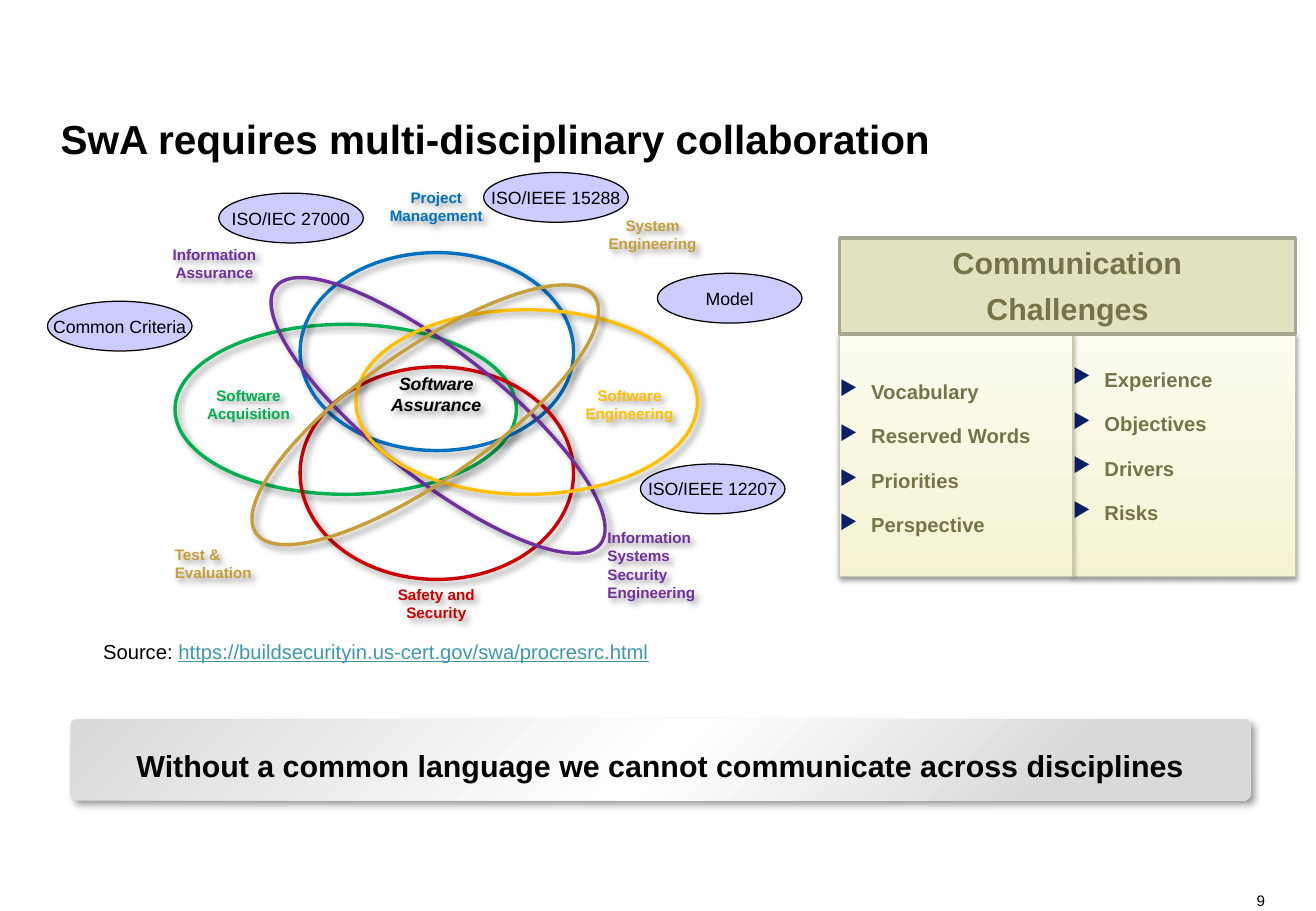
from dataclasses import dataclass

from lxml import etree
from pptx import Presentation
from pptx.dml.color import RGBColor
from pptx.enum.shapes import MSO_SHAPE
from pptx.enum.text import MSO_ANCHOR, PP_ALIGN
from pptx.oxml.ns import qn
from pptx.util import Inches, Pt

LEFT, CENTER, RIGHT = PP_ALIGN.LEFT, PP_ALIGN.CENTER, PP_ALIGN.RIGHT
TOP, MIDDLE, BOTTOM = MSO_ANCHOR.TOP, MSO_ANCHOR.MIDDLE, MSO_ANCHOR.BOTTOM
RECT, ROUND_RECT, OVAL = MSO_SHAPE.RECTANGLE, MSO_SHAPE.ROUNDED_RECTANGLE, MSO_SHAPE.OVAL


@dataclass(frozen=True)
class Theme:
    font: str = "Arial"
    black: str = "000000"
    green: str = "00B050"
    blue: str = "0070C0"
    red: str = "CC0000"
    purple: str = "7030A0"
    yellow: str = "FFC000"
    gold: str = "C69E3A"
    olive: str = "757448"
    header_fill: str = "E2E1C0"
    header_line: str = "A7A68E"
    panel_line: str = "C9C8A9"
    bullet: str = "0B1F65"
    standard: str = "CCCCFF"
    link: str = "3D97AF"
    panel_stops: tuple = ((0, "F4F3CF"), (35, "F7F6DD"), (100, "FCFCF1"))
    banner_stops: tuple = ((0, "D9D9D9"), (50, "FFFFFF"), (83, "D9D9D9"))
    soft_shadow: tuple = (40, 4, 3, 45)
    panel_shadow: tuple = (38, 3.1, 1.6, 90)
    title_size: float = 24
    heading_size: float = 18
    body_size: float = 12
    standard_size: float = 10.5
    label_size: float = 9


T = Theme()


def add_color(parent, color):
    return etree.SubElement(parent, qn("a:srgbClr"), val=color)


def set_shadow(sp, shadow=None):
    sp.shadow.inherit = False
    if shadow:
        alpha, blur, dist, angle = shadow
        effects = sp._element.spPr.find(qn("a:effectLst"))
        outer = etree.SubElement(effects, qn("a:outerShdw"), blurRad=str(Pt(blur)),
                                 dist=str(Pt(dist)), dir=str(angle * 60000),
                                 algn="tl", rotWithShape="0")
        etree.SubElement(add_color(outer, T.black), qn("a:alpha"), val=str(alpha * 1000))


def set_gradient(sp, stops, angle):
    sp.fill.gradient()
    sp.fill.gradient_angle = angle
    gs_list = sp._element.spPr.find(qn("a:gradFill")).find(qn("a:gsLst"))
    for gs in list(gs_list):
        gs_list.remove(gs)
    for pos, color in stops:
        add_color(etree.SubElement(gs_list, qn("a:gs"), pos=str(pos * 1000)), color)


def add_bullet(p):
    pPr = p._p.get_or_add_pPr()
    pPr.set("marL", str(Inches(0.26)))
    pPr.set("indent", str(-Inches(0.26)))
    add_color(etree.SubElement(pPr, qn("a:buClr")), T.bullet)
    etree.SubElement(pPr, qn("a:buChar"), char="▶")


def add_run(p, text, size, color=T.black, bold=False, italic=False, underline=False):
    r = p.add_run()
    r.text = text
    f = r.font
    f.name, f.size, f.color.rgb = T.font, Pt(size), RGBColor.from_string(color)
    f.bold, f.italic, f.underline = bold, italic, underline


def set_text(sp, text, size, align=LEFT, anchor=TOP, insets=(0.1, 0.05, 0.1, 0.05),
             wrap=True, before=0, after=0, spacing=None, bullet=False, **font):
    tf = sp.text_frame
    tf.word_wrap, tf.vertical_anchor = wrap, anchor
    tf.margin_left, tf.margin_top, tf.margin_right, tf.margin_bottom = map(Inches, insets)
    for i, line in enumerate(text.split("\n")):
        p = tf.add_paragraph() if i else tf.paragraphs[0]
        if bullet:
            add_bullet(p)
        p.alignment = align
        p.space_before, p.space_after = Pt(before if i else 0), Pt(after)
        if spacing:
            p.line_spacing = spacing
        add_run(p, line, size, **font)
    return tf


def add_text(slide, box, text, size, **fmt):
    sp = slide.shapes.add_textbox(*map(Inches, box))
    set_text(sp, text, size, **fmt)
    return sp


def add_shape(slide, kind, box, fill=None, line=None, width=0.75, shadow=None):
    sp = slide.shapes.add_shape(kind, *map(Inches, box))
    if fill:
        sp.fill.solid()
        sp.fill.fore_color.rgb = RGBColor.from_string(fill)
    else:
        sp.fill.background()
    if line:
        sp.line.color.rgb = RGBColor.from_string(line)
        sp.line.width = Pt(width)
    else:
        sp.line.fill.background()
    set_shadow(sp, shadow)
    return sp


def add_title(slide, box):
    add_text(slide, box, "SwA requires multi-disciplinary collaboration", T.title_size,
             anchor=BOTTOM, insets=(0, 0, 0, 0), spacing=0.9, bold=True)


def add_disciplines(slide, box):
    x, y = box[:2]
    for dx, dy, w, h, rotation, color in (
        (0.19, 1.17, 2.81, 1.4, 0, T.green),
        (1.22, 0.58, 2.25, 1.63, 0, T.blue),
        (1.22, 1.52, 2.25, 1.75, 0, T.red),
        (0.65, 1.4, 3.41, 1.04, 38.4, T.purple),
        (1.68, 1.05, 2.81, 1.52, 0, T.yellow),
        (0.55, 1.38, 3.4, 1.07, 325, T.gold),
    ):
        sp = add_shape(slide, OVAL, (x + dx, y + dy, w, h), line=color, width=2,
                       shadow=T.soft_shadow)
        sp.rotation = rotation
    for text, dx, dy, w, h, color, align in (
        ("Software Acquisition", 0.28, 1.63, 1.03, 0.57, T.green, CENTER),
        ("Information Assurance", 0, 0.47, 1.03, 0.57, T.purple, CENTER),
        ("Project\nManagement", 1.78, 0, 1.12, 0.57, T.blue, CENTER),
        ("System\nEngineering", 3.56, 0.23, 1.12, 0.57, T.gold, CENTER),
        ("Software\nEngineering", 3.37, 1.63, 1.12, 0.57, T.yellow, CENTER),
        ("Information Systems Security Engineering", 3.65, 2.8, 1.12, 0.99, T.purple, LEFT),
        ("Safety and Security", 1.78, 3.27, 1.12, 0.57, T.red, CENTER),
        ("Test &\nEvaluation", 0.09, 2.94, 1.12, 0.57, T.gold, LEFT),
    ):
        sp = add_text(slide, (x + dx, y + dy, w, h), text, T.label_size, align=align,
                      color=color, bold=True)
        set_shadow(sp, T.soft_shadow)
    sp = add_text(slide, (x + 1.78, y + 1.52, 1.12, 0.64), "Software\nAssurance",
                  T.standard_size, align=CENTER, bold=True, italic=True)
    set_shadow(sp, T.soft_shadow)


def add_standards(slide, box):
    x, y = box[:2]
    for text, dx, dy in (("ISO/IEC 27000", 1.41, 0.17), ("Common Criteria", 0, 1.06),
                         ("ISO/IEEE 15288", 3.59, 0), ("Model", 5.02, 0.83),
                         ("ISO/IEEE 12207", 4.88, 2.4)):
        sp = add_shape(slide, OVAL, (x + dx, y + dy, 1.19, 0.41), T.standard, T.black)
        set_text(sp, text, T.standard_size, align=CENTER, anchor=MIDDLE,
                 insets=(0.05,) * 4, wrap=False)


def add_challenges(slide, box):
    x, y, w, h = box
    head, split = 0.79, 1.92
    for dx, width, top, text in (
        (split, w - split, 0.27, "Experience\nObjectives\nDrivers\nRisks"),
        (0, split, 0.37, "Vocabulary\nReserved Words\nPriorities\nPerspective"),
    ):
        sp = add_shape(slide, RECT, (x + dx, y + head, width, h - head),
                       line=T.panel_line, shadow=T.panel_shadow)
        set_gradient(sp, T.panel_stops, 90)
        set_text(sp, text, T.body_size, insets=(0, top, 0, 0), before=6, after=6,
                 bullet=True, color=T.olive, bold=True)
    sp = add_shape(slide, RECT, (x, y, w, head), T.header_fill, T.header_line, 2)
    set_text(sp, "Communication\nChallenges", T.heading_size, align=CENTER, before=6,
             color=T.olive, bold=True)


def add_source(slide, box):
    sp = add_text(slide, box, "Source: ", T.body_size, spacing=0.8)
    add_run(sp.text_frame.paragraphs[0],
            "https://buildsecurityin.us-cert.gov/swa/procresrc.html",
            T.body_size, color=T.link, underline=True)


def add_banner(slide, box):
    sp = add_shape(slide, ROUND_RECT, box, shadow=T.soft_shadow)
    sp.adjustments[0] = 0.075
    set_gradient(sp, T.banner_stops, 315)
    set_text(sp, "Without a common language we cannot communicate across disciplines",
             T.heading_size, align=CENTER, anchor=MIDDLE, insets=(0.1, 0.1, 0.1, 0), bold=True)


def add_page_number(slide, box):
    add_text(slide, box, "9", T.label_size, align=RIGHT, insets=(0, 0, 0, 0))


def main():
    prs = Presentation()
    prs.slide_width, prs.slide_height = Inches(10.83), Inches(7.5)
    slide = prs.slides.add_slide(prs.slide_layouts[6])
    add_title(slide, (0.5, 0.42, 9.83, 0.92))
    add_challenges(slide, (6.91, 1.96, 3.75, 2.79))
    add_disciplines(slide, (1.25, 1.5, 4.77, 3.84))
    add_source(slide, (0.75, 5.25, 5.3, 0.26))
    add_standards(slide, (0.39, 1.42, 6.21, 2.81))
    add_banner(slide, (0.58, 5.92, 9.71, 0.67))
    add_page_number(slide, (10.26, 7.34, 0.15, 0.15))
    prs.save("out.pptx")


if __name__ == "__main__":
    main()
